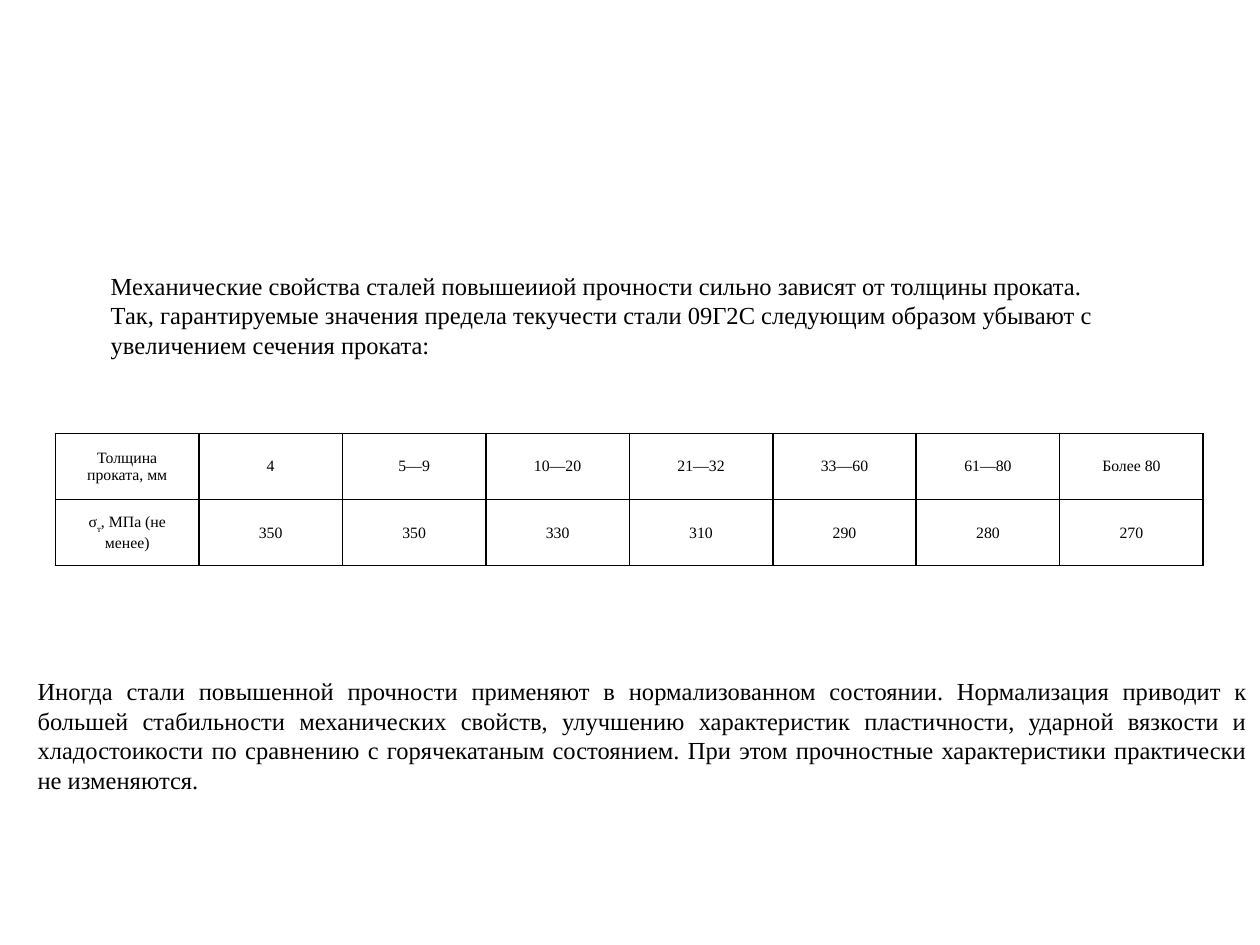
from lxml import etree
from pptx import Presentation
from pptx.dml.color import RGBColor
from pptx.enum import text
from pptx.oxml import ns
from pptx.util import Inches, Pt

BLACK = RGBColor(0, 0, 0)
FONT = "Times New Roman"

INTRO = (
    "Механические свойства сталей повышеииой прочности сильно зависят от толщины проката. "
    "Так, гарантируемые значения предела текучести стали 09Г2С следующим образом убывают "
    "с увеличением сечения проката:"
)
CONCLUSION = (
    "Иногда стали повышенной прочности применяют в нормализованном состоянии. "
    "Нормализация приводит к большей стабильности механических свойств, улучшению "
    "характеристик пластичности, ударной вязкости и хладостоикости по сравнению с "
    "горячекатаным состоянием. При этом прочностные характеристики практически не изменяются."
)
THICKNESSES = ["Толщина проката, мм", "4", "5—9", "10—20", "21—32", "33—60", "61—80", "Более 80"]
STRENGTHS = ["σ|т|, МПа (не менее)", "350", "350", "330", "310", "290", "280", "270"]


def write_text(paragraph, content, size, align):
    """Write content into the paragraph; a part between two bars becomes a subscript."""
    paragraph.alignment = align
    for index, part in enumerate(content.split("|")):
        run = paragraph.add_run()
        run.text = part
        run.font.name = FONT
        run.font.size = Pt(size)
        run.font.color.rgb = BLACK
        if index % 2:
            run.font._element.set("baseline", "-30000")


def add_borders(cell, color, width):
    properties = cell._tc.get_or_add_tcPr()
    for index, side in enumerate(("lnL", "lnR", "lnT", "lnB")):
        line = etree.Element(ns.qn(f"a:{side}"), w=str(Pt(width)))
        fill = etree.SubElement(line, ns.qn("a:solidFill"))
        etree.SubElement(fill, ns.qn("a:srgbClr"), val=str(color))
        properties.insert(index, line)


presentation = Presentation()
presentation.slide_width = Inches(10)
presentation.slide_height = Inches(7.5)
slide = presentation.slides.add_slide(presentation.slide_layouts[6])

for content, left, top, width, align in (
    (INTRO, 0.78, 2.1, 8.22, text.PP_ALIGN.LEFT),
    (CONCLUSION, 0.2, 5.32, 9.8, text.PP_ALIGN.JUSTIFY),
):
    box = slide.shapes.add_textbox(Inches(left), Inches(top), Inches(width), Inches(1.04))
    box.text_frame.word_wrap = True
    box.text_frame.vertical_anchor = text.MSO_ANCHOR.TOP
    write_text(box.text_frame.paragraphs[0], content, size=14, align=align)

rows = [THICKNESSES, STRENGTHS]
table = slide.shapes.add_table(
    len(rows), len(THICKNESSES), Inches(0.44), Inches(3.44), Inches(9.11), Inches(1.05)
).table
table.first_row = False
table.horz_banding = False

for row, values in zip(table.rows, rows):
    for cell, value in zip(row.cells, values):
        cell.fill.background()
        cell.vertical_anchor = text.MSO_ANCHOR.MIDDLE
        cell.margin_left = cell.margin_right = Inches(0.13)
        cell.margin_top = cell.margin_bottom = Inches(0.04)
        add_borders(cell, BLACK, width=1)
        write_text(cell.text_frame.paragraphs[0], value, size=9, align=text.PP_ALIGN.CENTER)

presentation.save("out.pptx")
